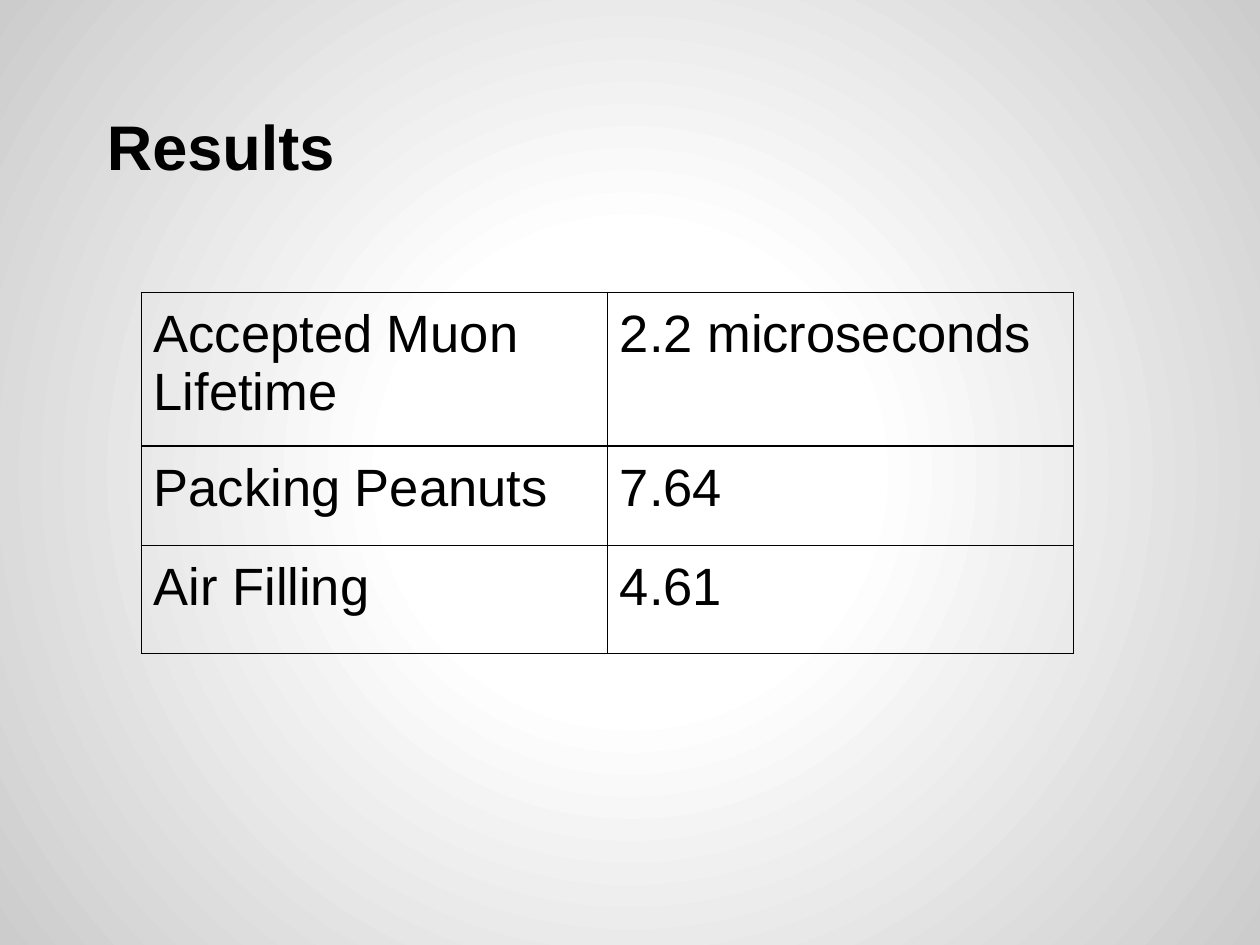
from lxml import etree
from pptx import Presentation
from pptx.dml.color import RGBColor
from pptx.enum import text
from pptx.oxml import parse_xml
from pptx.oxml.ns import nsdecls, qn
from pptx.util import Inches, Pt

FONT = "Arial"
BLACK = "000000"
MARGIN = Inches(0.1)
ROWS = [
    ("Accepted Muon Lifetime", "2.2 microseconds"),
    ("Packing Peanuts", "7.64"),
    ("Air Filling", "4.61"),
]
ROW_HEIGHTS = [1.22, 0.79, 0.86]
COLUMN_WIDTH = 3.7


def color(value):
    return RGBColor.from_string(value)


def set_radial_background(s, stops):
    """Fill the background with a circular gradient from the centre outwards."""
    fill = s.background.fill
    fill.solid()
    solid = next(s.element.iter(qn("a:solidFill")))
    gs = "".join(
        f'<a:gs pos="{percent * 1000}"><a:srgbClr val="{value}"/></a:gs>'
        for percent, value in stops
    )
    gradient = parse_xml(
        f'<a:gradFill {nsdecls("a")}><a:gsLst>{gs}</a:gsLst><a:path path="circle">'
        '<a:fillToRect l="50000" t="50000" r="50000" b="50000"/></a:path></a:gradFill>'
    )
    solid.getparent().replace(solid, gradient)


def set_text(tf, content, size, bold=False):
    tf.text = content
    tf.word_wrap = True
    font = tf.paragraphs[0].runs[0].font
    font.name, font.size, font.bold = FONT, Pt(size), bold
    font.color.rgb = color(BLACK)


def set_margins(box):
    box.margin_left = box.margin_right = MARGIN
    box.margin_top = box.margin_bottom = MARGIN


def add_title(s, content):
    sp = s.shapes.add_textbox(Inches(0.5), Inches(0.3), Inches(9), Inches(1.25))
    tf = sp.text_frame
    set_text(tf, content, 36, bold=True)
    set_margins(tf)
    tf.vertical_anchor = text.MSO_ANCHOR.BOTTOM
    pPr = tf.paragraphs[0]._p.get_or_add_pPr()
    pPr.set("marL", "0")
    pPr.set("indent", str(Inches(0.25)))


def set_borders(cell, value, width):
    tcPr = cell._tc.get_or_add_tcPr()
    for i, side in enumerate("LRTB"):
        ln = etree.Element(qn(f"a:ln{side}"), w=str(Pt(width)))
        fill = etree.SubElement(ln, qn("a:solidFill"))
        etree.SubElement(fill, qn("a:srgbClr"), val=value)
        tcPr.insert(i, ln)


def add_results_table(s):
    width, height = COLUMN_WIDTH * len(ROWS[0]), sum(ROW_HEIGHTS)
    table = s.shapes.add_table(
        len(ROWS), len(ROWS[0]),
        Inches(1.12), Inches(2.32), Inches(width), Inches(height),
    ).table
    table.first_row = table.horz_banding = False
    for row, row_height, values in zip(table.rows, ROW_HEIGHTS, ROWS):
        row.height = Inches(row_height)
        for cell, value in zip(row.cells, values):
            set_text(cell.text_frame, value, 30)
            set_margins(cell)
            cell.fill.background()
            set_borders(cell, BLACK, 0.75)


def main():
    prs = Presentation()
    prs.slide_width, prs.slide_height = Inches(10), Inches(7.5)
    s = prs.slides.add_slide(prs.slide_layouts[6])
    set_radial_background(s, [(0, "FFFFFF"), (30, "FFFFFF"), (100, "CCCCCC")])
    add_title(s, "Results")
    add_results_table(s)
    prs.save("out.pptx")


if __name__ == "__main__":
    main()
